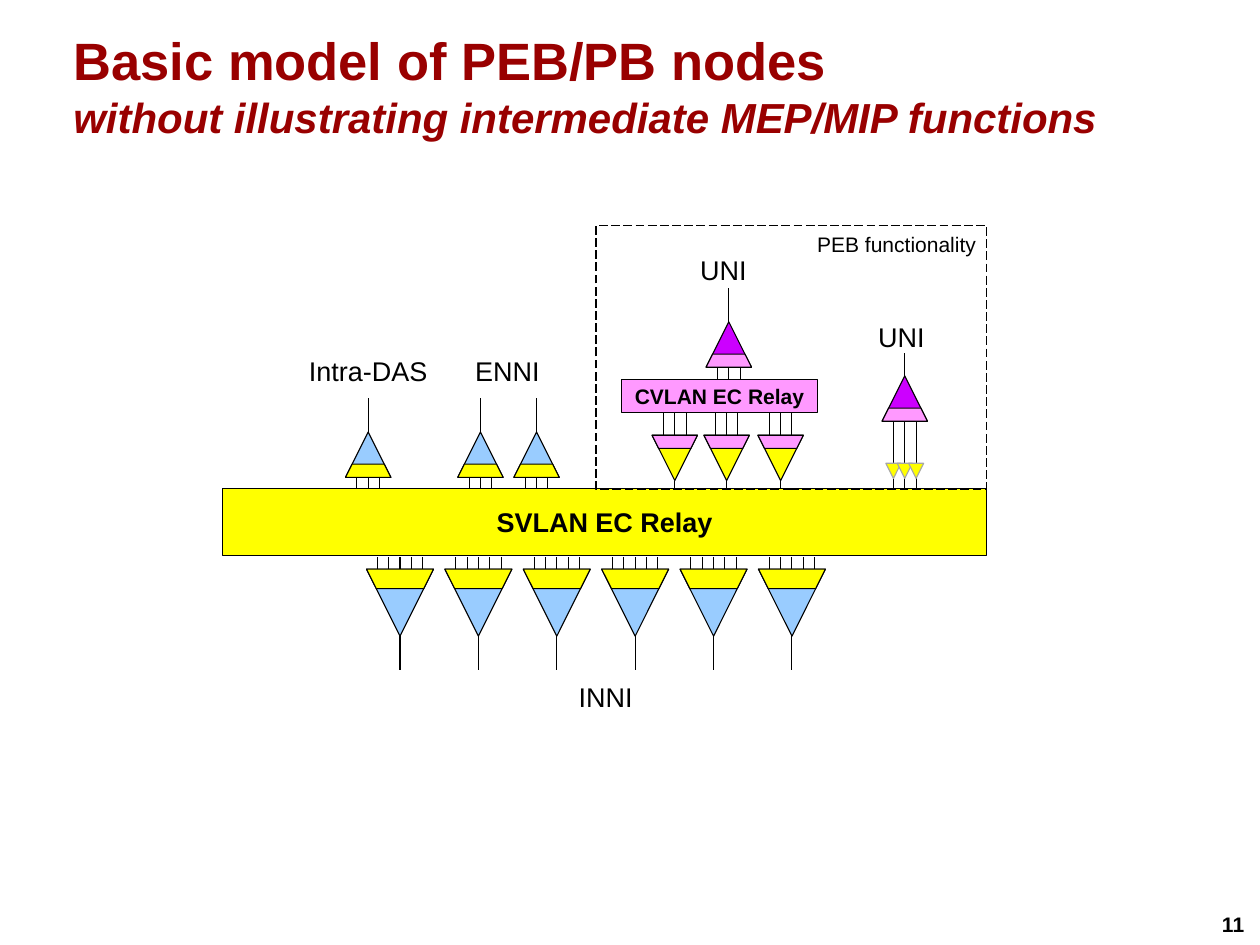
import pptx
import pptx.dml.color
import pptx.enum.dml
import pptx.enum.shapes
import pptx.enum.text
import pptx.oxml
import pptx.util
from pptx.util import Inches

SHAPES = pptx.enum.shapes.MSO_SHAPE
ALIGN = pptx.enum.text.PP_ALIGN
ANCHOR = pptx.enum.text.MSO_ANCHOR

BLACK = "000000"
DARK_RED = "990000"
GRAY = "A6A6A6"
YELLOW = "FFFF00"
BLUE = "99CCFF"
PINK = "FF99FF"
PURPLE = "CC00FF"

RELAY_TOP = 4.52
THREE_WIDE = 0.21
FIVE_WIDE = 0.42


def rgb(color):
    return pptx.dml.color.RGBColor.from_string(color)


def set_font(paragraph, size, color=BLACK, bold=False):
    paragraph.font.name = "Arial"
    paragraph.font.size = pptx.util.Pt(size)
    paragraph.font.bold = bold
    paragraph.font.color.rgb = rgb(color)


def add_title(slide, heading, subheading):
    title = slide.shapes.title
    title.left, title.top = Inches(0.58), Inches(0.2)
    title.width, title.height = Inches(10.5), Inches(1.11)
    frame = title.text_frame
    frame.auto_size = pptx.enum.text.MSO_AUTO_SIZE.NONE
    frame.vertical_anchor = ANCHOR.BOTTOM
    frame.margin_bottom = 0
    paragraph = frame.paragraphs[0]
    paragraph.alignment = ALIGN.LEFT
    set_font(paragraph, 35, DARK_RED, True)
    paragraph.add_run().text = heading
    paragraph.add_line_break()
    run = paragraph.add_run()
    run.text = subheading
    run.font.size = pptx.util.Pt(28)
    run.font.italic = True


def add_label(slide, text, center, top, width=1.24):
    box = slide.shapes.add_textbox(
        Inches(center - width / 2), Inches(top), Inches(width), Inches(0.3))
    frame = box.text_frame
    frame.word_wrap = True
    frame.margin_left = frame.margin_right = 0
    frame.margin_top = frame.margin_bottom = 0
    paragraph = frame.paragraphs[0]
    paragraph.text = text
    paragraph.alignment = ALIGN.CENTER
    set_font(paragraph, 18)


def add_page_number(slide, number):
    box = slide.shapes.add_textbox(
        Inches(11.22), Inches(8.39), Inches(0.44), Inches(0.34))
    box.text_frame.word_wrap = False
    paragraph = box.text_frame.paragraphs[0]
    paragraph.text = number
    set_font(paragraph, 14, bold=True)


def add_outlined(shapes, preset, left, top, width, height, fill, line=BLACK):
    shape = shapes.add_shape(
        preset, Inches(left), Inches(top), Inches(width), Inches(height))
    shape.shadow.inherit = False
    if fill:
        shape.fill.solid()
        shape.fill.fore_color.rgb = rgb(fill)
    else:
        shape.fill.background()
    shape.line.color.rgb = rgb(line)
    shape.line.width = pptx.util.Pt(0.75)
    return shape


def add_box(slide, text, left, top, width, height, fill, size,
            bold=True, alignment=ALIGN.CENTER, anchor=ANCHOR.MIDDLE):
    box = add_outlined(
        slide.shapes, SHAPES.RECTANGLE, left, top, width, height, fill)
    box.text_frame.vertical_anchor = anchor
    paragraph = box.text_frame.paragraphs[0]
    paragraph.text = text
    paragraph.alignment = alignment
    set_font(paragraph, size, bold=bold)
    return box


def add_port(slide, center, top, size, tip_color, band_color, down=False):
    group = slide.shapes.add_group_shape()
    left = center - size / 2
    band_height = 0.29 * size
    band_top = top if down else top + size - band_height
    triangle = add_outlined(
        group.shapes, SHAPES.ISOSCELES_TRIANGLE, left, top, size, size, tip_color)
    band = add_outlined(
        group.shapes, SHAPES.TRAPEZOID, left, band_top, size, band_height, band_color)
    band.adjustments[0] = 0.5
    for part in (triangle, band):
        part.rotation = 180 if down else 0


def spread(center, width, count):
    return [center - width / 2 + width * i / (count - 1) for i in range(count)]


def add_lines(slide, centers, top, bottom):
    for x in centers:
        line = slide.shapes.add_connector(
            pptx.enum.shapes.MSO_CONNECTOR.STRAIGHT,
            Inches(x), Inches(top), Inches(x), Inches(bottom))
        line.line.color.rgb = rgb(BLACK)
        line.line.width = pptx.util.Pt(0.75)
        properties = line.line._get_or_add_ln().getparent()
        properties.append(pptx.oxml.parse_xml(
            '<a:effectLst xmlns:a='
            '"http://schemas.openxmlformats.org/drawingml/2006/main"/>'))


def add_inni_ports(slide):
    for center in spread(5.52, 3.63, 6):
        add_port(slide, center, 5.27, 0.62, BLUE, YELLOW, down=True)
        add_lines(slide, spread(center, FIVE_WIDE, 5), 5.16, 5.27)
        add_lines(slide, [center], 5.89, 6.2)
    add_label(slide, "INNI", 5.61, 6.3)


def add_upper_ports(slide):
    for center in (3.41, 4.45, 4.97):
        add_port(slide, center, 4, 0.42, BLUE, YELLOW)
        add_lines(slide, spread(center, THREE_WIDE, 3), 4.42, RELAY_TOP)
        add_lines(slide, [center], 3.69, 4)
    add_label(slide, "Intra-DAS", 3.41, 3.28)
    add_label(slide, "ENNI", 4.7, 3.28)


def add_cvlan_branch(slide):
    add_label(slide, "UNI", 6.7, 2.35)
    add_lines(slide, [6.75], 2.67, 2.98)
    add_port(slide, 6.75, 2.98, 0.42, PURPLE, PINK)
    add_lines(slide, spread(6.75, THREE_WIDE, 3), 3.4, 3.51)
    for center in (6.25, 6.73, 7.23):
        add_lines(slide, spread(center, THREE_WIDE, 3), 3.82, 4.03)
        add_port(slide, center, 4.03, 0.42, YELLOW, PINK, down=True)
        add_lines(slide, [center], 4.45, RELAY_TOP)
    add_box(slide, "CVLAN EC Relay", 5.76, 3.51, 1.81, 0.31, PINK, 14)


def add_direct_branch(slide):
    center = 8.38
    add_label(slide, "UNI", 8.35, 2.97)
    add_lines(slide, [center], 3.27, 3.48)
    add_port(slide, center, 3.48, 0.42, PURPLE, PINK)
    tap_centers = spread(center, THREE_WIDE, 3)
    add_lines(slide, tap_centers, 3.9, RELAY_TOP)
    for tap_center in tap_centers:
        tap = add_outlined(
            slide.shapes, SHAPES.ISOSCELES_TRIANGLE,
            tap_center - 0.07, 4.29, 0.14, 0.14, YELLOW, GRAY)
        tap.rotation = 180


def main():
    presentation = pptx.Presentation()
    presentation.slide_width = Inches(11.67)
    presentation.slide_height = Inches(8.75)
    slide = presentation.slides.add_slide(presentation.slide_layouts[5])
    add_title(slide, "Basic model of PEB/PB nodes",
              "without illustrating intermediate MEP/MIP functions")
    add_inni_ports(slide)
    add_upper_ports(slide)
    add_cvlan_branch(slide)
    add_direct_branch(slide)
    add_box(slide, "SVLAN EC Relay", 2.06, RELAY_TOP, 7.08, 0.62, YELLOW, 18)
    region = add_box(slide, "PEB functionality", 5.52, 2.09, 3.62, 2.44, None, 14,
                     bold=False, alignment=ALIGN.RIGHT, anchor=ANCHOR.TOP)
    region.line.dash_style = pptx.enum.dml.MSO_LINE.LONG_DASH
    add_page_number(slide, "11")
    presentation.save("out.pptx")


if __name__ == "__main__":
    main()
